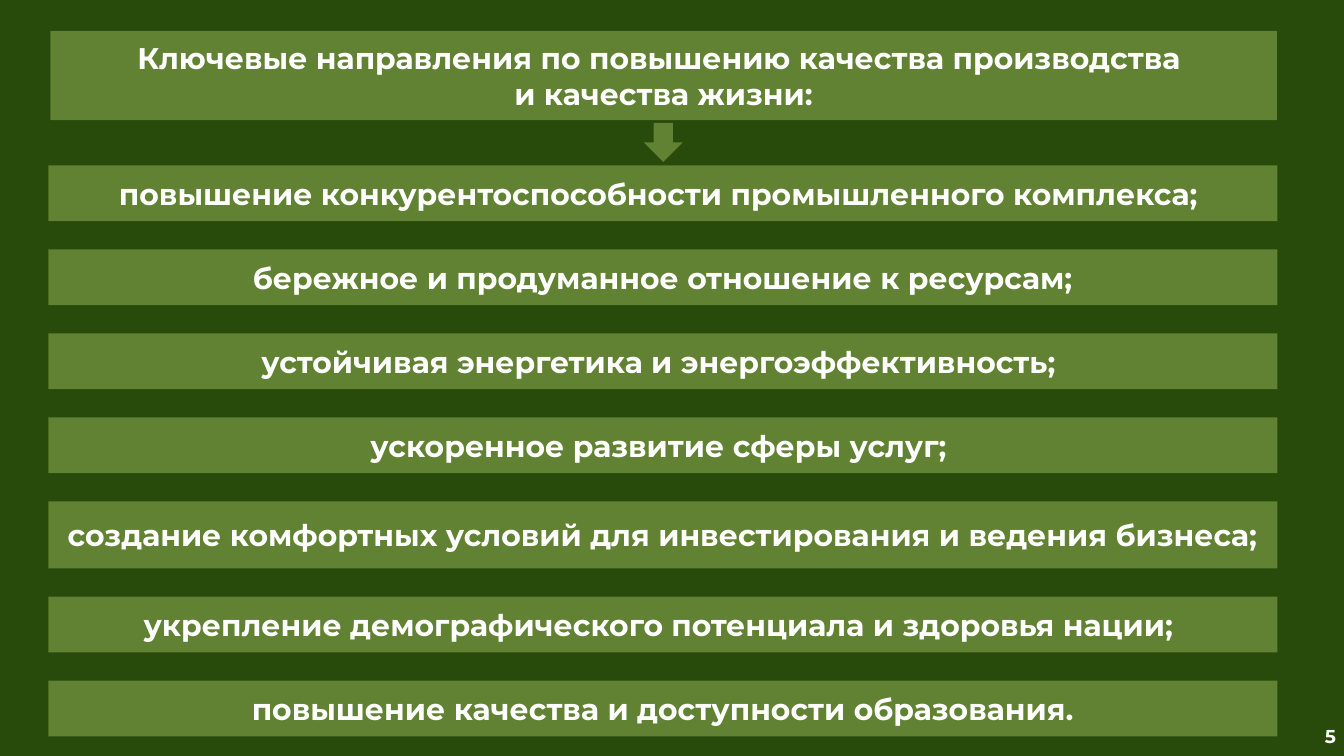
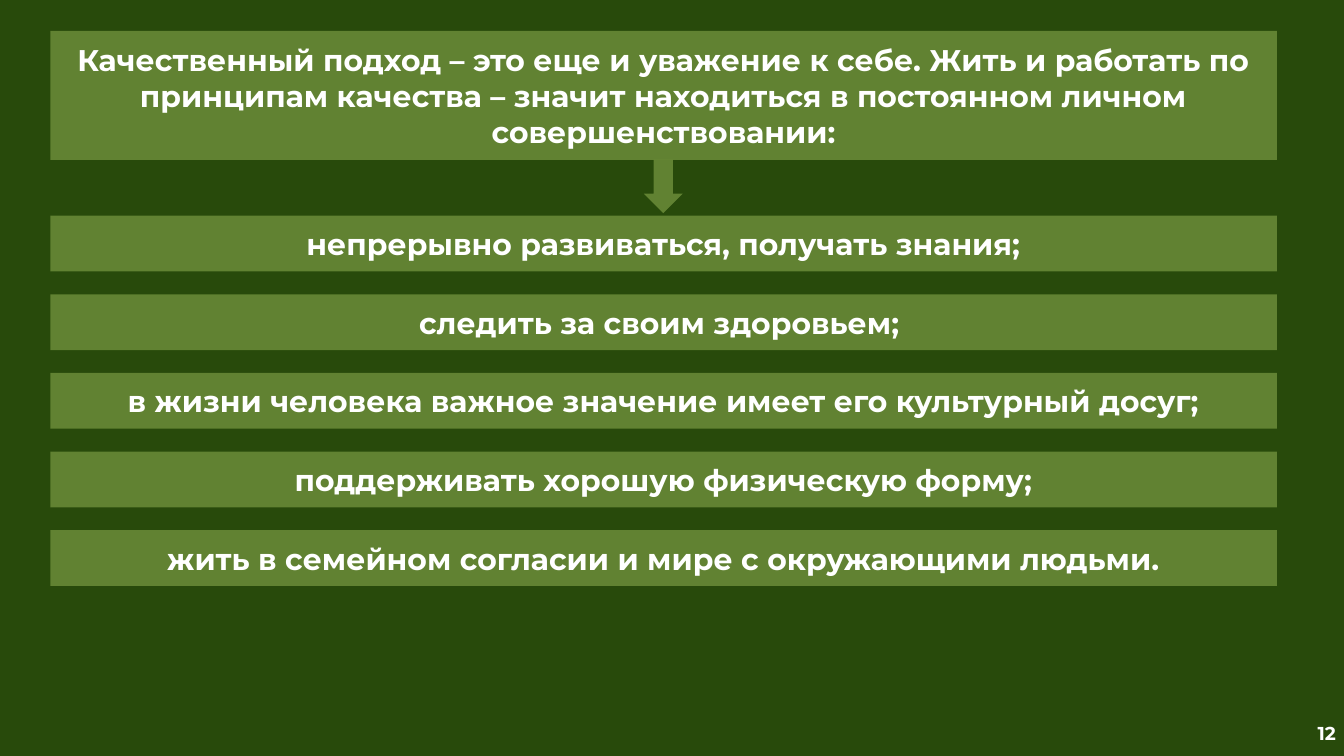
"""Builds two slides on quality: a heading, an arrow and a column of statement bars."""
from lxml import etree
from pptx import Presentation, util as u
from pptx.dml.color import RGBColor
from pptx.enum import shapes, text
from pptx.oxml.ns import qn

COLOURS = {"back": "284A0B", "bar": "9BBB59", "text": "FFFFFF"}
FONT = "Montserrat"
BAR_OPACITY = 50
WIDTH, HEIGHT = 20, 11.25
HEADING_LEFT, HEADING_TOP, HEADING_WIDTH = 0.75, 0.46, 18.25
BAR_HEIGHT, TALL_BAR_HEIGHT = 0.83, 1
ARROW_LEFT, ARROW_WIDTH = 9.58, 0.58
NUMBER_LEFT, NUMBER_WIDTH, NUMBER_HEIGHT = 17.65, 2.33, 0.4

SLIDES = [
    {
        "number": "5",
        "number_top": 10.76,
        "heading": "Ключевые направления по повышению качества производства \vи качества жизни:",
        "heading_height": 1.33,
        "arrow": (1.83, 0.58),
        "bars": (0.72, 2.46, 18.29),
        "gap": 0.42,
        "tall": 4,
        "statements": [
            "повышение конкурентоспособности промышленного комплекса; ",
            "бережное и продуманное отношение к ресурсам;",
            "устойчивая энергетика и энергоэффективность; ",
            "ускоренное развитие сферы услуг; ",
            "создание комфортных условий для инвестирования и ведения бизнеса;",
            "укрепление демографического потенциала и здоровья нации; ",
            "повышение качества и доступности образования.",
        ],
    },
    {
        "number": "12",
        "number_top": 10.71,
        "heading": "Качественный подход – это еще и уважение к себе. Жить и работать по "
                   "принципам качества – значит находиться в постоянном личном совершенствовании:",
        "heading_height": 1.92,
        "arrow": (2.38, 0.79),
        "bars": (0.75, 3.21, 18.25),
        "gap": 0.34,
        "tall": None,
        "statements": [
            "непрерывно развиваться, получать знания;",
            "следить за своим здоровьем; ",
            "в жизни человека важное значение имеет его культурный досуг;",
            "поддерживать хорошую физическую форму;",
            "жить в семейном согласии и мире с окружающими людьми.",
        ],
    },
]


def inches(*lengths):
    return [u.Inches(length) for length in lengths]


def paint(fill, colour):
    fill.solid()
    fill.fore_color.rgb = RGBColor.from_string(COLOURS[colour])


def paint_bar(shape):
    paint(shape.fill, "bar")
    colour = shape.element.spPr.find(qn("a:solidFill"))[0]
    etree.SubElement(colour, qn("a:alpha"), val=str(BAR_OPACITY * 1000))
    shape.line.fill.background()


def write(shape, words, size=32, align=text.PP_ALIGN.CENTER):
    frame = shape.text_frame
    frame.text = words
    frame.word_wrap = True
    frame.auto_size = text.MSO_AUTO_SIZE.NONE
    frame.vertical_anchor = text.MSO_ANCHOR.MIDDLE
    for para in frame.paragraphs:
        para.alignment = align
        for span in para.runs:
            span.font.name = FONT
            span.font.size = u.Pt(size)
            span.font.bold = True
            span.font.color.rgb = RGBColor.from_string(COLOURS["text"])


def add_block(page, kind, left, top, width, height):
    block = page.shapes.add_shape(kind, *inches(left, top, width, height))
    block.shadow.inherit = False
    paint_bar(block)
    return block


def add_heading(page, words, height):
    heading = page.shapes.title
    heading.left, heading.top, heading.width, heading.height = inches(
        HEADING_LEFT, HEADING_TOP, HEADING_WIDTH, height)
    paint_bar(heading)
    write(heading, words)


def add_bars(page, content):
    left, top, width = content["bars"]
    for index, statement in enumerate(content["statements"]):
        height = TALL_BAR_HEIGHT if index == content["tall"] else BAR_HEIGHT
        bar = add_block(page, shapes.MSO_SHAPE.RECTANGLE, left, top, width, height)
        write(bar, statement)
        top += height + content["gap"]


def add_number(page, number, top):
    box = page.shapes.add_textbox(*inches(NUMBER_LEFT, top, NUMBER_WIDTH, NUMBER_HEIGHT))
    write(box, number, 20, text.PP_ALIGN.RIGHT)


def build_page(deck, content):
    page = deck.slides.add_slide(deck.slide_layouts.get_by_name("Title Only"))
    add_heading(page, content["heading"], content["heading_height"])
    add_bars(page, content)
    arrow_top, arrow_height = content["arrow"]
    add_block(page, shapes.MSO_SHAPE.DOWN_ARROW, ARROW_LEFT, arrow_top, ARROW_WIDTH, arrow_height)
    add_number(page, content["number"], content["number_top"])


def main():
    deck = Presentation()
    deck.slide_width, deck.slide_height = inches(WIDTH, HEIGHT)
    paint(deck.slide_master.background.fill, "back")
    for content in SLIDES:
        build_page(deck, content)
    deck.save("out.pptx")


if __name__ == "__main__":
    main()
